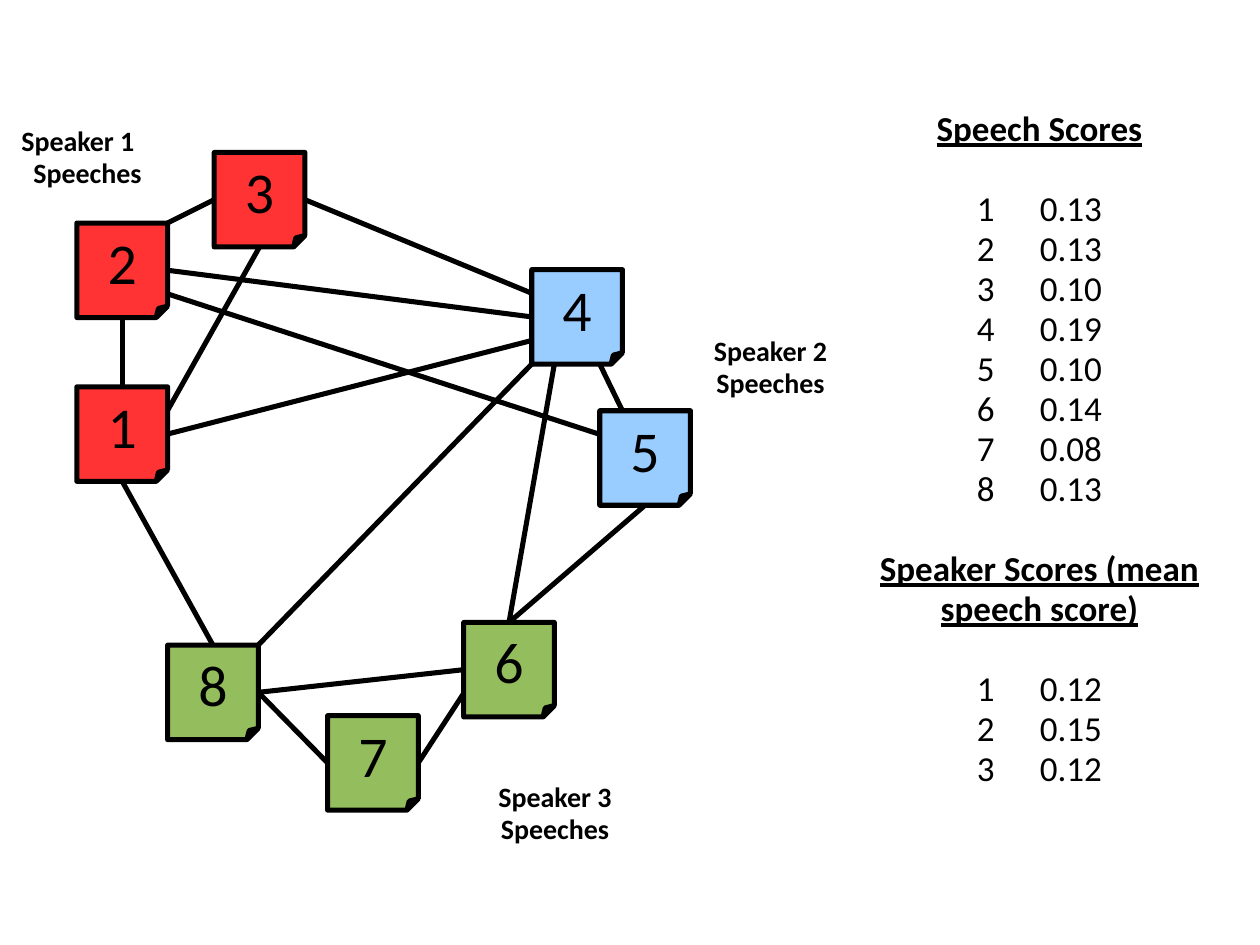
import dataclasses

import pptx
import pptx.dml.color
import pptx.enum.shapes
import pptx.enum.text
import pptx.oxml
import pptx.oxml.ns
import pptx.util
from pptx.util import Inches, Pt

RED, BLUE, GREEN, BLACK = "FF3333", "99CCFF", "94BD5E", "000000"
NODE_WIDTH, NODE_HEIGHT = 0.72, 0.75
LINE_WIDTH = Pt(2.89)
CENTER = pptx.enum.text.PP_ALIGN.CENTER
LEFT = pptx.enum.text.PP_ALIGN.LEFT
NAMESPACE = pptx.oxml.ns.nsdecls("a")


@dataclasses.dataclass(frozen=True)
class Speech:
    left: float
    top: float
    color: str


@dataclasses.dataclass(frozen=True)
class Link:
    """Two speeches, each with the point on its box as fractions of width and height."""
    start: int
    start_point: tuple[float, float]
    end: int
    end_point: tuple[float, float]


@dataclasses.dataclass(frozen=True)
class Label:
    speaker: int
    left: float
    top: float
    width: float
    first_align: pptx.enum.text.PP_ALIGN = CENTER


@dataclasses.dataclass(frozen=True)
class ScoreList:
    title: str
    scores: tuple[str, ...]


TOP, SIDE_LEFT, BOTTOM, SIDE_RIGHT = (0.5, 0), (0, 0.5), (0.5, 1), (1, 0.5)
SITES = {TOP: 0, SIDE_LEFT: 1, BOTTOM: 2, SIDE_RIGHT: 3}

SPEECHES = {
    1: Speech(0.61, 3.07, RED),
    2: Speech(0.61, 1.77, RED),
    3: Speech(1.70, 1.21, RED),
    4: Speech(4.22, 2.14, BLUE),
    5: Speech(4.76, 3.26, BLUE),
    6: Speech(3.68, 4.94, GREEN),
    7: Speech(2.60, 5.68, GREEN),
    8: Speech(1.33, 5.12, GREEN),
}
LINKS = [
    Link(2, (1, 0), 3, SIDE_LEFT),
    Link(1, TOP, 2, BOTTOM),
    Link(1, (1, 0.25), 3, BOTTOM),
    Link(3, SIDE_RIGHT, 4, (0, 0.25)),
    Link(2, SIDE_RIGHT, 4, SIDE_LEFT),
    Link(1, SIDE_RIGHT, 4, (0, 0.75)),
    Link(4, (0.75, 1), 5, (0.25, 0)),
    Link(1, BOTTOM, 8, TOP),
    Link(8, SIDE_RIGHT, 7, SIDE_LEFT),
    Link(8, SIDE_RIGHT, 6, SIDE_LEFT),
    Link(7, SIDE_RIGHT, 6, (0, 0.75)),
    Link(4, (0.25, 1), 6, TOP),
    Link(6, TOP, 5, BOTTOM),
    Link(8, (1, 0), 4, (0, 1)),
    Link(2, (1, 0.75), 5, (0, 0.25)),
]
LABELS = [
    Label(1, 0.08, 0.96, 1.23, LEFT),
    Label(2, 4.94, 2.63, 2.35),
    Label(3, 3.50, 6.17, 1.81),
]
SCORE_LISTS = [
    ScoreList("Speech Scores",
              ("0.13", "0.13", "0.10", "0.19", "0.10", "0.14", "0.08", "0.13")),
    ScoreList("Speaker Scores (mean speech score)", ("0.12", "0.15", "0.12")),
]


def rgb(color: str) -> pptx.dml.color.RGBColor:
    return pptx.dml.color.RGBColor.from_string(color)


def prepare_frame(frame, wrap: bool = True) -> None:
    frame.word_wrap = wrap
    frame.margin_left = frame.margin_right = Inches(0.09)
    frame.margin_top = frame.margin_bottom = Inches(0.04)


def add_tab_stops(para) -> None:
    """Set left tab stops every half inch."""
    stops = "".join(f'<a:tab pos="{Inches(step / 2)}" algn="l"/>' for step in range(8))
    para._p.get_or_add_pPr().append(
        pptx.oxml.parse_xml(f"<a:tabLst {NAMESPACE}>{stops}</a:tabLst>"))


def set_fold(box, fraction: float) -> None:
    """Set the fold size, which python-pptx does not list among the adjustments."""
    guides = box._element.spPr.find(".//" + pptx.oxml.ns.qn("a:avLst"))
    guides.append(pptx.oxml.parse_xml(
        f'<a:gd {NAMESPACE} name="adj" fmla="val {round(fraction * 100000)}"/>'))


def write_line(frame, text: str, *, size: float, align=CENTER, bold: bool = False,
               underline: bool = False, before: float = 0, after: float = 0):
    """Fill the empty first paragraph of the frame, or add another one."""
    para = frame.paragraphs[0] if not frame.text else frame.add_paragraph()
    para.alignment = align
    para.line_spacing = 0.95
    para.space_before, para.space_after = Pt(before), Pt(after)
    span = para.add_run()
    span.text = text
    span.font.name = "Calibri"
    span.font.size = Pt(size)
    span.font.bold = bold
    span.font.underline = underline
    span.font.color.rgb = rgb(BLACK)
    return para


def add_text_box(page, left: float, top: float, width: float, height: float):
    box = page.shapes.add_textbox(Inches(left), Inches(top), Inches(width), Inches(height))
    prepare_frame(box.text_frame)
    return box.text_frame


def draw_speech(page, number: int, speech: Speech):
    box = page.shapes.add_shape(
        pptx.enum.shapes.MSO_SHAPE.FOLDED_CORNER, Inches(speech.left), Inches(speech.top),
        Inches(NODE_WIDTH), Inches(NODE_HEIGHT))
    set_fold(box, 0.125)
    box.shadow.inherit = False
    box.fill.solid()
    box.fill.fore_color.rgb = rgb(speech.color)
    box.line.color.rgb = rgb(BLACK)
    box.line.width = LINE_WIDTH
    prepare_frame(box.text_frame, wrap=False)
    box.text_frame.vertical_anchor = pptx.enum.text.MSO_ANCHOR.MIDDLE
    write_line(box.text_frame, str(number), size=33)
    return box


def locate(number: int, point: tuple[float, float]) -> tuple[int, int]:
    speech = SPEECHES[number]
    return (Inches(speech.left + point[0] * NODE_WIDTH),
            Inches(speech.top + point[1] * NODE_HEIGHT))


def draw_link(page, link: Link, boxes: dict) -> None:
    connector = page.shapes.add_connector(
        pptx.enum.shapes.MSO_CONNECTOR.STRAIGHT,
        *locate(link.start, link.start_point), *locate(link.end, link.end_point))
    if link.start_point in SITES:
        connector.begin_connect(boxes[link.start], SITES[link.start_point])
    if link.end_point in SITES:
        connector.end_connect(boxes[link.end], SITES[link.end_point])
    connector.line.color.rgb = rgb(BLACK)
    connector.line.width = LINE_WIDTH
    connector._element.spPr.append(pptx.oxml.parse_xml(f"<a:effectLst {NAMESPACE}/>"))


def draw_label(page, label: Label) -> None:
    frame = add_text_box(page, label.left, label.top, label.width, 0.63)
    write_line(frame, f"Speaker {label.speaker}", size=16, bold=True, align=label.first_align)
    write_line(frame, "Speeches", size=16, bold=True)


def draw_scores(page) -> None:
    frame = add_text_box(page, 6.67, 0.83, 3.16, 6.15)
    gap = 23
    for index, group in enumerate(SCORE_LISTS):
        write_line(frame, group.title, size=20, bold=True, underline=True,
                   before=gap if index else 0, after=gap)
        for number, score in enumerate(group.scores, start=1):
            add_tab_stops(write_line(frame, f"{number}\t{score}", size=20))


def main() -> None:
    deck = pptx.Presentation()
    deck.slide_width, deck.slide_height = Inches(10), Inches(7.5)
    page = deck.slides.add_slide(deck.slide_layouts[6])
    boxes = {number: draw_speech(page, number, speech) for number, speech in SPEECHES.items()}
    for link in LINKS:
        draw_link(page, link, boxes)
    for label in LABELS:
        draw_label(page, label)
    draw_scores(page)
    deck.save("out.pptx")


if __name__ == "__main__":
    main()
